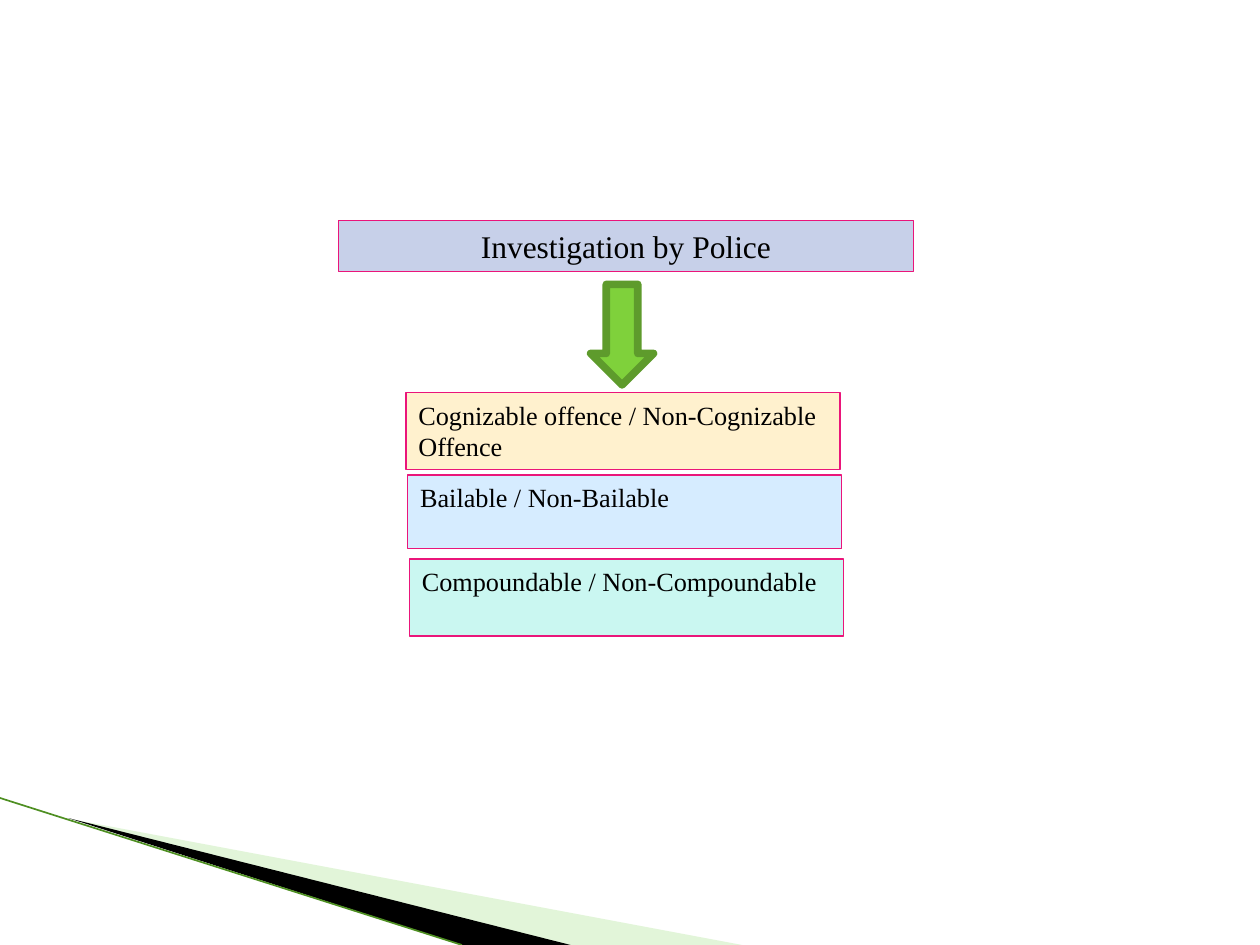
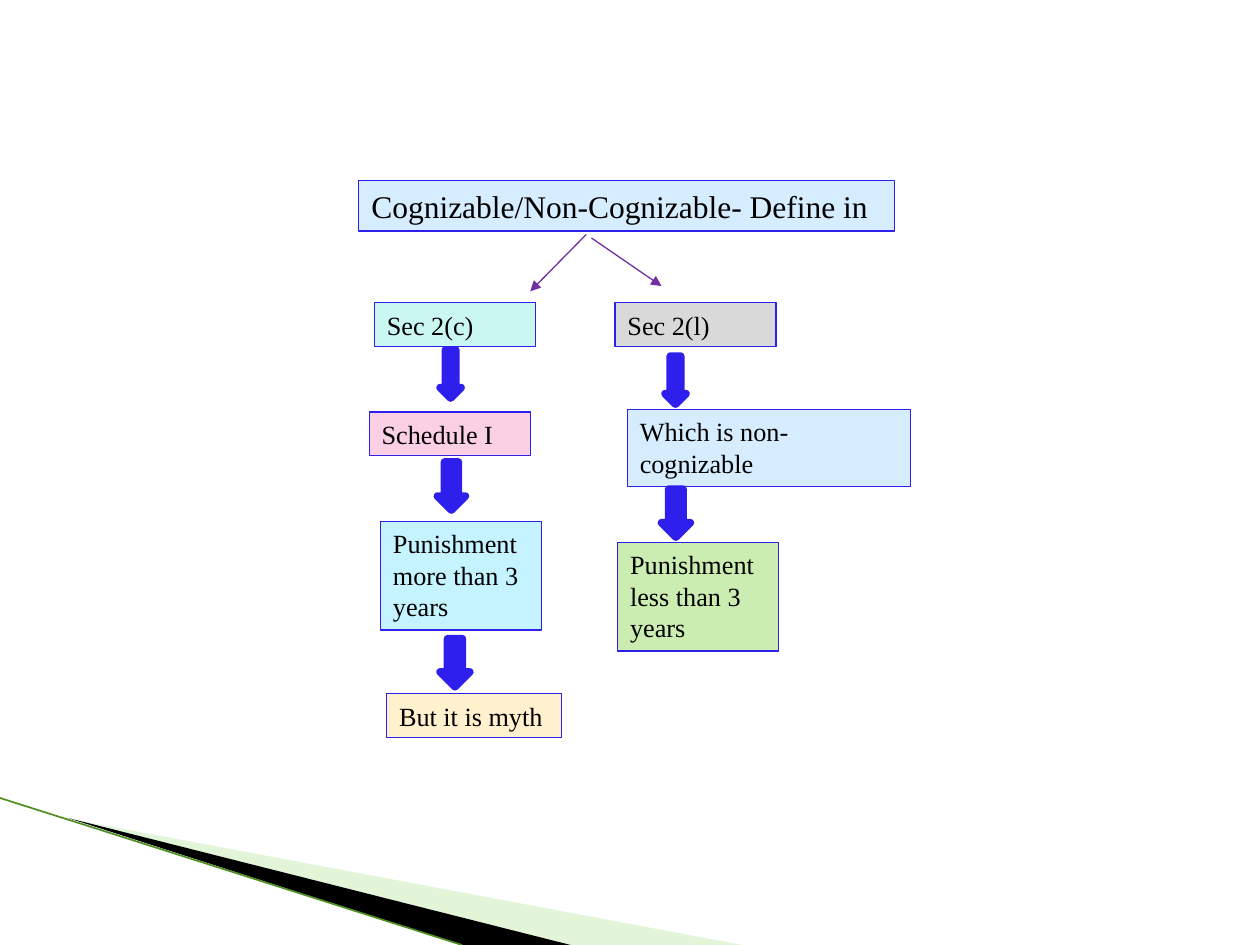
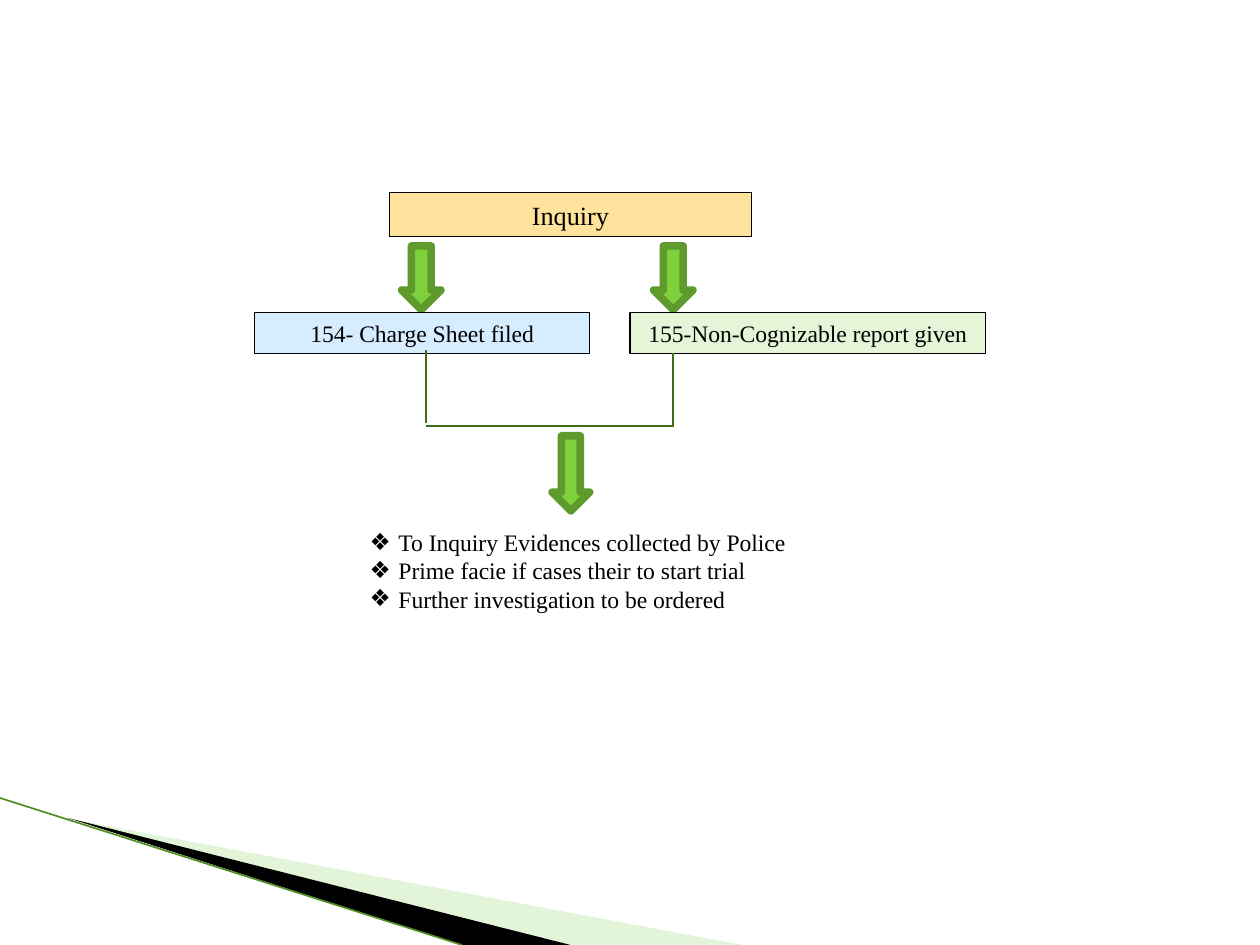
from dataclasses import dataclass

from lxml.etree import SubElement
from pptx import Presentation
from pptx.dml.color import RGBColor
from pptx.enum.shapes import MSO_CONNECTOR as Conn, MSO_SHAPE as Shape
from pptx.enum.text import MSO_ANCHOR as Anchor, MSO_AUTO_SIZE as AutoSize, PP_ALIGN as Align
from pptx.oxml.ns import qn
from pptx.util import Pt


@dataclass(frozen=True)
class Theme:
    """Colours, font and sizes shared by all slides."""
    font: str = "Times New Roman"
    heading: float = 18
    body: float = 15
    small: float = 13.5
    thin: float = 0.75
    thick: float = 4.33
    black: str = "000000"
    pink: str = "EA157A"
    blue: str = "2E1FED"
    purple: str = "7030A0"
    green: str = "7FD13B"
    green_edge: str = "5E9B2C"
    green_line: str = "3F6D19"
    swoosh: str = "B8E7A1"
    swoosh_edge: str = "4E8F22"
    lavender: str = "C7D0E9"
    cream: str = "FFF1CE"
    sand: str = "FFE39D"
    sky: str = "D6ECFF"
    mint: str = "CAF7F1"
    gray: str = "D9D9D9"
    rose: str = "FBD0E4"
    aqua: str = "C5F3FF"
    lime: str = "CCEDB1"
    pale_lime: str = "E5F6D8"


T = Theme()


def rgb(color):
    """Turn a hex string into a colour."""
    return RGBColor.from_string(color)


def paint(s, fill, line=None, width=T.thin):
    """Set the fill and outline of a shape."""
    s.fill.solid()
    s.fill.fore_color.rgb = rgb(fill)
    if line:
        s.line.color.rgb = rgb(line)
        s.line.width = Pt(width)
    else:
        s.line.fill.background()


def place(s, box):
    """Move and size a placeholder."""
    s.left, s.top, s.width, s.height = map(Pt, box)


def write(p, text, size, align=Align.LEFT):
    """Add one run of text to a paragraph."""
    p.alignment = align
    p.space_before = Pt(0)
    r = p.add_run()
    r.text = text
    r.font.name = T.font
    r.font.size = Pt(size)
    r.font.color.rgb = rgb(T.black)


def frame(s):
    """Prepare the text frame of a shape for wrapped, top-aligned text."""
    tf = s.text_frame
    tf.word_wrap = True
    tf.auto_size = AutoSize.NONE
    tf.vertical_anchor = Anchor.TOP
    return tf


def heading(slide, text, box, fill, line, size=T.heading, align=Align.CENTER):
    """Turn the title placeholder into the top box of the flow."""
    s = slide.shapes.title
    place(s, box)
    paint(s, fill, line)
    write(frame(s).paragraphs[0], text, size, align)


def text_box(slide, text, box, fill, line, size=T.body, align=Align.LEFT):
    """Add a filled rectangle with text."""
    s = slide.shapes.add_shape(Shape.RECTANGLE, *map(Pt, box))
    s.shadow.inherit = False
    paint(s, fill, line)
    write(frame(s).paragraphs[0], text, size, align)


def down_arrow(slide, box, fill=T.green, line=T.green_edge):
    """Add a thick-edged block arrow."""
    s = slide.shapes.add_shape(Shape.DOWN_ARROW, *map(Pt, box))
    s.shadow.inherit = False
    paint(s, fill, line, T.thick)


def line(slide, start, end, color, width=T.thin, arrow=False):
    """Add a straight line, with an arrowhead at its end if wanted."""
    s = slide.shapes.add_connector(Conn.STRAIGHT, *map(Pt, (*start, *end)))
    s.line.color.rgb = rgb(color)
    s.line.width = Pt(width)
    sp_pr = s.element.spPr
    if arrow:
        SubElement(sp_pr.find(qn("a:ln")), qn("a:tailEnd"), type="triangle")
    SubElement(sp_pr, qn("a:effectLst"))
    return s


def polygon(slide, points, fill, alpha=None):
    """Add a closed outline, partly transparent if alpha is given."""
    start, *rest = [tuple(map(Pt, point)) for point in points]
    builder = slide.shapes.build_freeform(*start)
    builder.add_line_segments(rest, close=True)
    s = builder.convert_to_shape()
    s.shadow.inherit = False
    paint(s, fill)
    if alpha:
        color = s.element.spPr.find(qn("a:solidFill"))[0]
        SubElement(color, qn("a:alpha"), val=str(alpha * 1000))
    return s


def bullets(slide, items, box):
    """Fill the body placeholder with a diamond-bulleted list."""
    s = slide.placeholders[1]
    place(s, box)
    tf = frame(s)
    for i, item in enumerate(items):
        p = tf.add_paragraph() if i else tf.paragraphs[0]
        p_pr = p._p.get_or_add_pPr()
        p_pr.set("marL", str(Pt(16.5)))
        p_pr.set("indent", str(-Pt(16.5)))
        SubElement(p_pr, qn("a:buChar"), char="❖")
        write(p, item, T.small)


def master_swoosh(prs, slide):
    """Build the corner swoosh and move it to the slide master."""
    parts = (
        polygon(slide, [(40, 468), (424, 540), (325, 540)], T.swoosh, 40),
        polygon(slide, [(39, 467.5), (326, 540), (264, 540)], T.black),
        line(slide, (0, 456), (264, 540), T.swoosh_edge, 0.95),
    )
    for number, s in enumerate(parts, 101):
        s.element.xpath(".//p:cNvPr")[0].set("id", str(number))
        prs.slide_master.shapes.element.append(s.element)


def investigation_slide(slide):
    """Build the slide on the police investigation."""
    heading(slide, "Investigation by Police", (193.5, 126, 328.5, 29), T.lavender, T.pink)
    down_arrow(slide, (337.5, 162.5, 36, 57.5))
    for text, left, top, height, fill in (
        ("Cognizable offence / Non-Cognizable Offence", 232, 224.5, 44, T.cream),
        ("Bailable / Non-Bailable", 233, 271.5, 42, T.sky),
        ("Compoundable / Non-Compoundable", 234, 319.5, 44, T.mint),
    ):
        text_box(slide, text, (left, top, 248, height), fill, T.pink)


def definition_slide(slide):
    """Build the slide on where the offences are defined."""
    heading(slide, "Cognizable/Non-Cognizable- Define in", (205, 103, 306, 29),
            T.sky, T.blue, align=Align.LEFT)
    line(slide, (335, 134), (303, 166.5), T.purple, arrow=True)
    line(slide, (338, 136), (378, 163.5), T.purple, arrow=True)
    for text, box, fill in (
        ("Sec 2(c)", (214, 173, 92, 25), T.mint),
        ("Schedule I", (211, 235.5, 92, 25), T.rose),
        ("Punishment more than 3 years", (217.5, 298, 92, 62), T.aqua),
        ("But it is myth", (221, 396.5, 100, 25), T.cream),
        ("Sec 2(l)", (351.5, 173, 92, 25), T.gray),
        ("Which is non-cognizable", (358.5, 234, 162, 44), T.sky),
        ("Punishment less than 3 years", (353, 310, 92, 62), T.lime),
    ):
        text_box(slide, text, box, fill, T.blue)
    for left, top, width in ((251.5, 200, 12), (250, 264, 16), (251.5, 365, 17),
                             (380, 203.5, 12), (378, 279.5, 16.5)):
        down_arrow(slide, (left, top, width, 27.5), T.blue, T.blue)


def inquiry_slide(slide):
    """Build the slide on the inquiry."""
    heading(slide, "Inquiry", (222.5, 110, 207, 25), T.sand, T.black, T.body)
    for left in (229.5, 373.5):
        down_arrow(slide, (left, 140.5, 22.5, 36.5))
    for text, left, width, fill in (
        ("154- Charge Sheet filed", 145.5, 191.5, T.sky),
        ("155-Non-Cognizable report given", 360, 203, T.pale_lime),
    ):
        text_box(slide, text, (left, 178.5, width, 23.5), fill, T.black, T.small, Align.CENTER)
    for start, end in (((243.5, 200), (243.5, 242)),
                       ((384.5, 201.5), (384.5, 243.5)),
                       ((243.5, 243.5), (385, 243.5))):
        line(slide, start, end, T.green_line)
    down_arrow(slide, (315.5, 249, 21.5, 43))
    bullets(slide, ("To Inquiry Evidences collected by Police",
                    "Prime facie if cases their to start trial",
                    "Further investigation to be ordered"), (204, 298, 367, 56))


def main():
    """Build and save the presentation."""
    prs = Presentation()
    prs.slide_width, prs.slide_height = Pt(720), Pt(540)
    with_list, title_only = prs.slide_layouts[1], prs.slide_layouts[5]
    for build, layout in ((investigation_slide, title_only),
                          (definition_slide, title_only),
                          (inquiry_slide, with_list)):
        build(prs.slides.add_slide(layout))
    master_swoosh(prs, prs.slides[0])
    prs.save("out.pptx")


if __name__ == "__main__":
    main()
